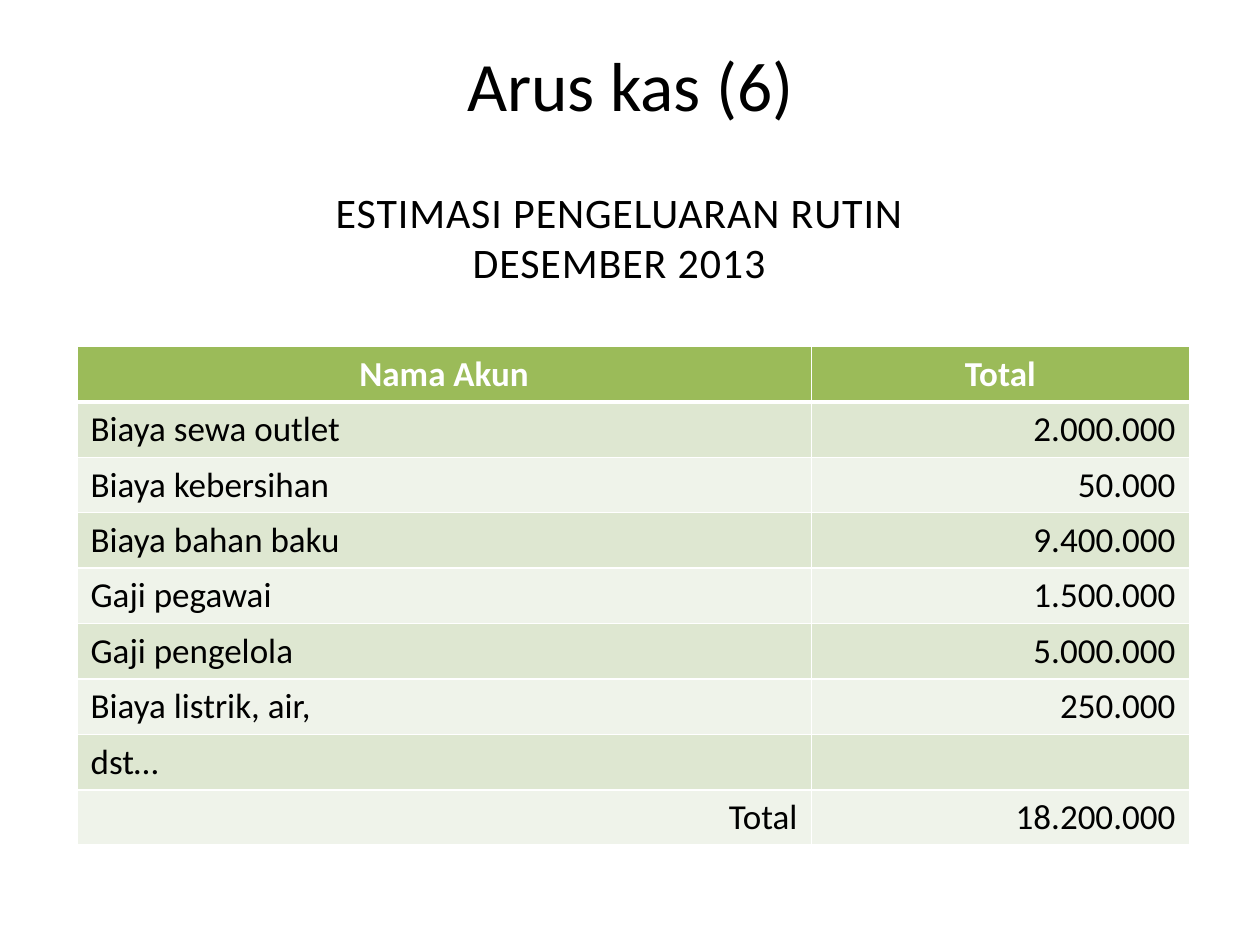
import pptx
import pptx.dml.color
import pptx.enum.text
import pptx.oxml
import pptx.oxml.ns
import pptx.util

Inches = pptx.util.Inches
Align = pptx.enum.text.PP_ALIGN
Anchor = pptx.enum.text.MSO_ANCHOR

FONT = "Calibri"
BLACK, WHITE = "000000", "FFFFFF"
HEADER_FILL = "9BBB59"
BAND_FILLS = ["DEE7D1", "EFF3EA"]
THIN_LINE, HEADER_LINE = 1, 3

COLUMN_WIDTHS = [5.83, 3]
ROW_HEIGHT = 0.44
HEADER = ("Nama Akun", "Total")
EXPENSES = [
    ("Biaya sewa outlet", "2.000.000"),
    ("Biaya kebersihan", "50.000"),
    ("Biaya bahan baku", "9.400.000"),
    ("Gaji pegawai", "1.500.000"),
    ("Gaji pengelola", "5.000.000"),
    ("Biaya listrik, air,", "250.000"),
    ("dst…", ""),
]
GRAND_TOTAL = ("Total", "18.200.000")


def color(value):
    return pptx.dml.color.RGBColor.from_string(value)


def write(frame, text, size=20, ink=BLACK, bold=False, align=Align.LEFT, spacing=0):
    """Fill a text frame with one paragraph per line of text."""
    for index, line in enumerate(text.split("\n")):
        para = frame.add_paragraph() if index else frame.paragraphs[0]
        para.alignment = align
        span = para.add_run()
        span.text = line
        span.font.name = FONT
        span.font.size = pptx.util.Pt(size)
        span.font.bold = bold
        span.font.color.rgb = color(ink)
        if spacing:
            span.font._element.set("spc", str(int(spacing * 100)))


def add_text(page, left, top, width, height, text, anchor, **text_format):
    box = page.shapes.add_textbox(Inches(left), Inches(top), Inches(width), Inches(height))
    box.text_frame.word_wrap = True
    box.text_frame.vertical_anchor = anchor
    write(box.text_frame, text, **text_format)


def set_borders(cell, top, bottom):
    """Draw white borders, with widths in points."""
    properties = cell._tc.get_or_add_tcPr()
    widths = {"lnL": THIN_LINE, "lnR": THIN_LINE, "lnT": top, "lnB": bottom}
    # Borders must come before the fill in the cell properties.
    for index, (side, width) in enumerate(widths.items()):
        properties.insert(index, pptx.oxml.parse_xml(
            f'<a:{side} {pptx.oxml.ns.nsdecls("a")} w="{pptx.util.Pt(width)}">'
            f'<a:solidFill><a:srgbClr val="{WHITE}"/></a:solidFill></a:{side}>'))


def fill_cell(cell, text, fill, top=THIN_LINE, bottom=THIN_LINE, **text_format):
    cell.fill.solid()
    cell.fill.fore_color.rgb = color(fill)
    cell.margin_left = cell.margin_right = Inches(0.11)
    cell.margin_top = cell.margin_bottom = Inches(0.05)
    set_borders(cell, top, bottom)
    if text:
        write(cell.text_frame, text, **text_format)


def add_expense_table(page, left, top):
    body = EXPENSES + [GRAND_TOTAL]
    row_count = len(body) + 1
    table = page.shapes.add_table(
        row_count, len(HEADER), Inches(left), Inches(top),
        Inches(sum(COLUMN_WIDTHS)), Inches(ROW_HEIGHT * row_count)).table
    for column, width in zip(table.columns, COLUMN_WIDTHS):
        column.width = Inches(width)

    for column, label in enumerate(HEADER):
        fill_cell(table.cell(0, column), label, HEADER_FILL, bottom=HEADER_LINE,
                  ink=WHITE, bold=True, align=Align.CENTER)

    for index, entry in enumerate(body):
        band = BAND_FILLS[index % len(BAND_FILLS)]
        line_above = HEADER_LINE if index == 0 else THIN_LINE
        account_align = Align.RIGHT if entry is GRAND_TOTAL else Align.LEFT
        for column, (text, align) in enumerate(zip(entry, (account_align, Align.RIGHT))):
            fill_cell(table.cell(index + 1, column), text, band,
                      top=line_above, align=align)


def main():
    deck = pptx.Presentation()
    deck.slide_width, deck.slide_height = Inches(10), Inches(7.5)
    page = deck.slides.add_slide(deck.slide_layouts[6])
    add_text(page, 0.67, 0.33, 8.67, 0.67, "Arus kas (6)", Anchor.MIDDLE,
             size=39.6, align=Align.CENTER)
    add_expense_table(page, 0.61, 2.75)
    add_text(page, 0.58, 1.33, 8.67, 1, "ESTIMASI PENGELUARAN RUTIN\nDESEMBER 2013",
             Anchor.BOTTOM, size=24, align=Align.CENTER, spacing=0.5)
    deck.save("out.pptx")


if __name__ == "__main__":
    main()
